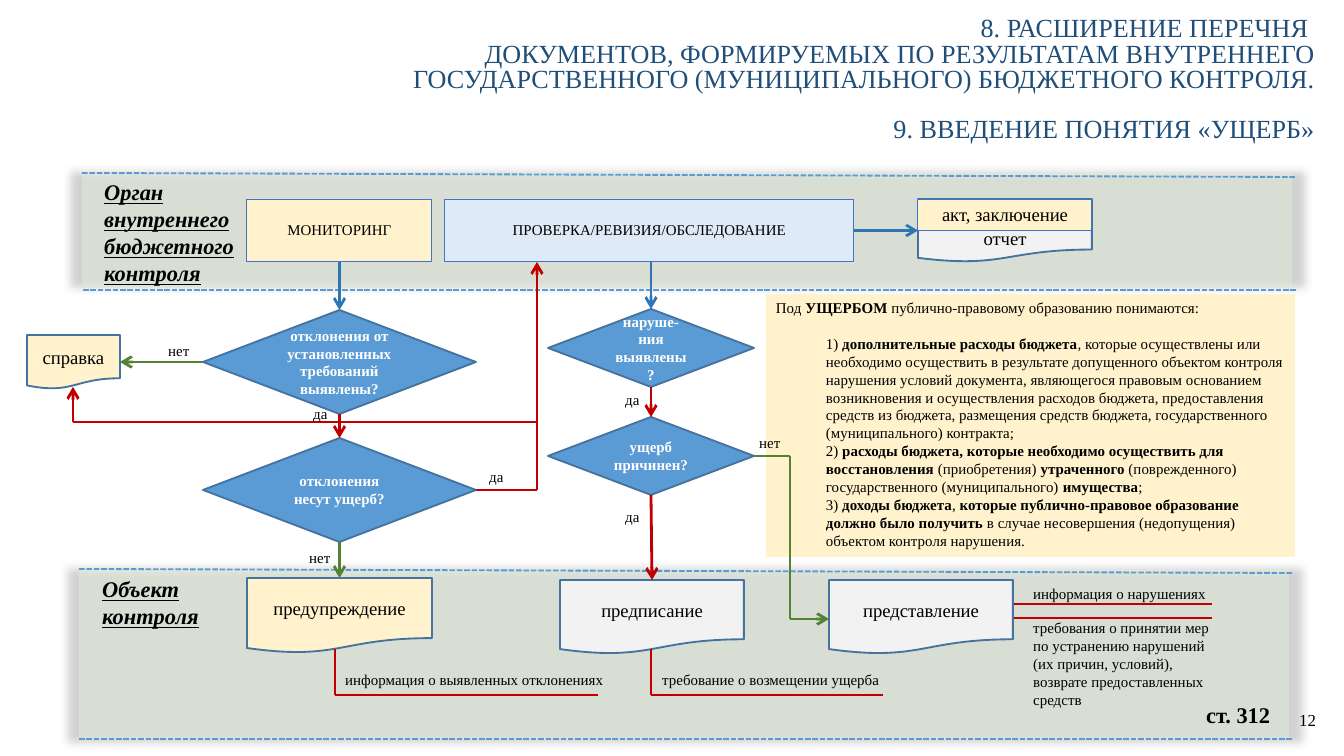
import pptx
import pptx.util
import pptx.dml.color
import pptx.enum.dml
import pptx.enum.shapes
import pptx.enum.text
import pptx.oxml
import pptx.oxml.ns

PX = 914400 / 134.4
FONT = "Times New Roman"
COLORS = {
    "title": "1F4E79", "black": "000000", "white": "FFFFFF", "band": "E2F0D9",
    "dash": "5B9BD5", "decision": "5B9BD5", "outline": "43739E", "border": "4472C4",
    "cream": "FFF2CC", "pale": "DEEBF7", "grey": "F2F2F2",
    "blue": "2E75B6", "red": "C00000", "green": "548235",
}
ALIGN = pptx.enum.text.PP_ALIGN
ANCHOR = pptx.enum.text.MSO_ANCHOR
KIND = pptx.enum.shapes.MSO_SHAPE
BOX, DECISION, DOCUMENT = KIND.RECTANGLE, KIND.FLOWCHART_DECISION, KIND.FLOWCHART_DOCUMENT

# Content: positions are left, top, width, height in px
TITLE = [
    "8. РАСШИРЕНИЕ ПЕРЕЧНЯ ",
    "ДОКУМЕНТОВ, ФОРМИРУЕМЫХ ПО РЕЗУЛЬТАТАМ ВНУТРЕННЕГО "
    "ГОСУДАРСТВЕННОГО (МУНИЦИПАЛЬНОГО) БЮДЖЕТНОГО КОНТРОЛЯ.",
    "9. ВВЕДЕНИЕ ПОНЯТИЯ «УЩЕРБ»",
]
BANDS = [(82, 173, 1210, 113), (79, 570, 1210, 169)]
DASHES = [((82, 173), (1295, 177)), ((83, 290), (1296, 290)),
          ((79, 569), (1292, 573)), ((79, 739), (1292, 739))]
BAND_TITLES = [("Орган внутреннего бюджетного контроля", (91, 172, 199, 149)),
               ("Объект контроля", (89, 569, 199, 95))]

# name: (kind, position, fill, text, size)
NODES = {
    "monitoring": (BOX, (247, 199, 185, 63), "cream", "МОНИТОРИНГ", 8),
    "audit": (BOX, (445, 199, 409, 63), "pale", "ПРОВЕРКА/РЕВИЗИЯ/ОБСЛЕДОВАНИЕ", 8),
    "report": (DOCUMENT, (918, 199, 174, 63), "grey", "отчет", 10),
    "act": (BOX, (918, 199, 174, 32), "cream", "акт, заключение", 10),
    "deviations": (DECISION, (203, 310, 273, 104), "decision",
                   "отклонения от установленных требований выявлены?", 8),
    "harmful": (DECISION, (203, 438, 273, 104), "decision", "отклонения несут ущерб?", 8),
    "violations": (DECISION, (548, 309, 206, 78), "decision", "наруше-ния выявлены?", 8),
    "damage": (DECISION, (548, 417, 206, 78), "decision", "ущерб причинен?", 8),
    "note": (DOCUMENT, (27, 335, 93, 54), "cream", "справка", 10),
    "warning": (DOCUMENT, (247, 578, 185, 75), "cream", "предупреждение", 10),
    "order": (DOCUMENT, (560, 580, 184, 74), "grey", "предписание", 10),
    "submission": (DOCUMENT, (829, 580, 184, 74), "grey", "представление", 10),
}

TOP, LEFT, BOTTOM, RIGHT = range(4)
# (colour, ends in an arrow, stops: points or (node, side))
ROUTES = [
    ("blue", True, [("monitoring", BOTTOM), ("deviations", TOP)]),
    ("blue", True, [(651, 262), ("violations", TOP)]),
    ("blue", True, [("audit", RIGHT), ("report", LEFT)]),
    ("red", True, [("deviations", BOTTOM), ("harmful", TOP)]),
    ("green", True, [("harmful", BOTTOM), ("warning", TOP)]),
    ("green", True, [("deviations", LEFT), ("note", RIGHT)]),
    ("red", True, [("harmful", RIGHT), (537, 490), (537, 262)]),
    ("red", True, [(537, 422), (339, 422), (73, 422), (73, 387)]),
    ("red", True, [("violations", BOTTOM), ("damage", TOP)]),
    ("red", True, [("damage", BOTTOM), ("order", TOP)]),
    ("green", True, [("damage", RIGHT), (790, 456), (790, 619), (829, 619)]),
    ("red", False, [(335, 649), (335, 695), (598, 695)]),
    ("red", False, [(651, 649), (651, 695), (883, 695)]),
    ("red", False, [(1014, 604), (1212, 604)]),
    ("red", False, [(1014, 618), (1212, 618)]),
]
ANSWERS = [("да", 300, 398), ("нет", 296, 542), ("да", 476, 461), ("нет", 155, 335),
           ("да", 612, 384), ("да", 612, 501), ("нет", 746, 427)]
DETAILS = [
    ("информация о нарушениях", (1020, 578, 220, 32)),
    ("требования о принятии мер по устранению нарушений (их причин, условий), "
     "возврате предоставленных средств", (1020, 612, 220, 103)),
    ("требование о возмещении ущерба", (649, 664, 266, 32)),
    ("информация о выявленных отклонениях", (332, 664, 286, 32)),
]
# Paragraphs of (text, bold) runs
DEFINITION = [
    [("Под ", False), ("УЩЕРБОМ ", True),
     ("публично-правовому образованию понимаются:", False)],
    [("1)\u00a0", False), ("дополнительные расходы бюджета", True),
     (", которые осуществлены или необходимо осуществить в результате допущенного объектом "
      "контроля нарушения условий документа, являющегося правовым основанием возникновения и "
      "осуществления расходов бюджета, предоставления средств из бюджета, размещения средств "
      "бюджета, государственного (муниципального) контракта;", False)],
    [("2)\u00a0", False),
     ("расходы бюджета, которые необходимо осуществить для восстановления ", True),
     ("(приобретения) ", False), ("утраченного", True),
     (" (поврежденного) государственного (муниципального) ", False),
     ("имущества", True), (";", False)],
    [("3)\u00a0", False), ("доходы бюджета", True), (", ", False),
     ("которые публично-правовое образование должно было получить", True),
     (" в случае несовершения (недопущения) объектом контроля нарушения.", False)],
]

presentation = pptx.Presentation()
presentation.slide_width = round(1344 * PX)
presentation.slide_height = round(756 * PX)
slide = presentation.slides.add_slide(presentation.slide_layouts[6])


def rgb(name):
    return pptx.dml.color.RGBColor.from_string(COLORS[name])


def emu(values):
    return [round(value * PX) for value in values]


def add_run(paragraph, text, size, color="black", bold=False, italic=False, underline=False):
    run = paragraph.add_run()
    run.text = text
    font = run.font
    font.name, font.size = FONT, pptx.util.Pt(size)
    font.bold, font.italic, font.underline = bold, italic, underline
    font.color.rgb = rgb(color)


def set_insets(frame, side, end):
    frame.margin_left = frame.margin_right = round(side * PX)
    frame.margin_top = frame.margin_bottom = round(end * PX)


def add_text(position, text, size, wrap=True, align=ALIGN.LEFT, **style):
    frame = slide.shapes.add_textbox(*emu(position)).text_frame
    frame.word_wrap = wrap
    paragraph = frame.paragraphs[0]
    paragraph.alignment = align
    add_run(paragraph, text, size, **style)
    return frame


def add_box(kind, position, fill, line=None, width=1):
    shape = slide.shapes.add_shape(kind, *emu(position))
    shape.shadow.inherit = False
    shape.fill.solid()
    shape.fill.fore_color.rgb = rgb(fill)
    if line:
        shape.line.color.rgb = rgb(line)
        shape.line.width = pptx.util.Pt(width)
    else:
        shape.line.fill.background()
    shape.text_frame.word_wrap = True
    return shape


def add_line(start, end, color, width):
    connector = slide.shapes.add_connector(
        pptx.enum.shapes.MSO_CONNECTOR.STRAIGHT, *emu(start + end))
    connector.line.color.rgb = rgb(color)
    connector.line.width = pptx.util.Pt(width)
    properties = connector._element.spPr
    properties.append(pptx.oxml.parse_xml(f"<a:effectLst {pptx.oxml.ns.nsdecls('a')}/>"))
    return connector


def locate(stop):
    """Point of a stop: the middle of a node's side, or the point itself."""
    if stop[0] not in NODES:
        return stop
    left, top, width, height = NODES[stop[0]][1]
    return [(left + width / 2, top), (left, top + height / 2),
            (left + width / 2, top + height), (left + width, top + height / 2)][stop[1]]


# Shaded bands with a soft glow-like shadow
for position in BANDS:
    band = add_box(BOX, position, "band")
    color = band.fill._xPr.find(".//" + pptx.oxml.ns.qn("a:srgbClr"))
    color.append(pptx.oxml.parse_xml(f'<a:alpha {pptx.oxml.ns.nsdecls("a")} val="45000"/>'))
    band._element.spPr.find(pptx.oxml.ns.qn("a:effectLst")).append(pptx.oxml.parse_xml(
        f'<a:outerShdw {pptx.oxml.ns.nsdecls("a")} blurRad="63500" sx="102000" sy="102000" '
        'algn="ctr" rotWithShape="0"><a:srgbClr val="000000"><a:alpha val="40000"/>'
        '</a:srgbClr></a:outerShdw>'))
for start, end in DASHES:
    add_line(start, end, "dash", 1).line.dash_style = pptx.enum.dml.MSO_LINE.SQUARE_DOT
for text, position in BAND_TITLES:
    add_text(position, text, 12, bold=True, italic=True, underline=True)

# Title
frame = add_text((320, 13, 1005, 142), TITLE[0], 14, align=ALIGN.RIGHT, color="title")
set_insets(frame, 10, 5)
for text in TITLE[1:]:
    add_run(frame.add_paragraph(), text, 14, color="title")
for paragraph in frame.paragraphs:
    paragraph.alignment = ALIGN.RIGHT
    paragraph.line_spacing = pptx.util.Pt(13.5)
frame.paragraphs[-1].space_before = pptx.util.Pt(13.5)

# Definition of damage
frame = add_box(BOX, (766, 294, 529, 263), "cream").text_frame
set_insets(frame, 10, 5)
frame.vertical_anchor = ANCHOR.TOP
for number, runs in enumerate(DEFINITION):
    paragraph = frame.add_paragraph() if number else frame.paragraphs[0]
    paragraph.alignment = ALIGN.LEFT
    if number:
        paragraph.level = 1
        paragraph._p.get_or_add_pPr().set("marL", str(round(50 * PX)))
        paragraph._p.get_or_add_pPr().set("indent", "0")
    if number == 1:
        paragraph.space_before = pptx.util.Pt(9.5)
    for text, bold in runs:
        add_run(paragraph, text, 8, bold=bold)

# Flowchart nodes
shapes = {}
for name, (kind, position, fill, text, size) in NODES.items():
    plain, decision = kind == BOX, kind == DECISION
    shape = add_box(kind, position, fill, "border" if plain else "outline", 0.5 if plain else 1)
    shapes[name] = shape
    paragraph = shape.text_frame.paragraphs[0]
    paragraph.alignment = ALIGN.CENTER
    shape.text_frame.vertical_anchor = ANCHOR.MIDDLE
    if plain:
        set_insets(shape.text_frame, 1, 1)
        paragraph.line_spacing = 0.9
    add_run(paragraph, text, size, "white" if decision else "black", bold=decision)
shapes["report"].text_frame.vertical_anchor = ANCHOR.BOTTOM
shapes["report"].text_frame.margin_bottom = 0

# Routes between nodes
for color, arrow, stops in ROUTES:
    for start, end in zip(stops, stops[1:]):
        connector = add_line(locate(start), locate(end), color, 1.5)
        if start[0] in NODES:
            connector.begin_connect(shapes[start[0]], start[1])
        if end[0] in NODES:
            connector.end_connect(shapes[end[0]], end[1])
    if arrow:
        connector.line._get_or_add_ln().append(pptx.oxml.parse_xml(
            f'<a:tailEnd {pptx.oxml.ns.nsdecls("a")} type="arrow"/>'))

# Labels, article and page number
for text, left, top in ANSWERS:
    add_text((left, top, 42 if text == "да" else 51, 32), text, 8, wrap=False)
for text, position in DETAILS:
    add_text(position, text, 8)
add_text((1193, 695, 100, 40), "ст. 312", 12, bold=True)
frame = add_text((1282, 700, 44, 40), "12", 9, align=ALIGN.RIGHT)
set_insets(frame, 10, 5)
frame.vertical_anchor = ANCHOR.MIDDLE

presentation.save("out.pptx")
